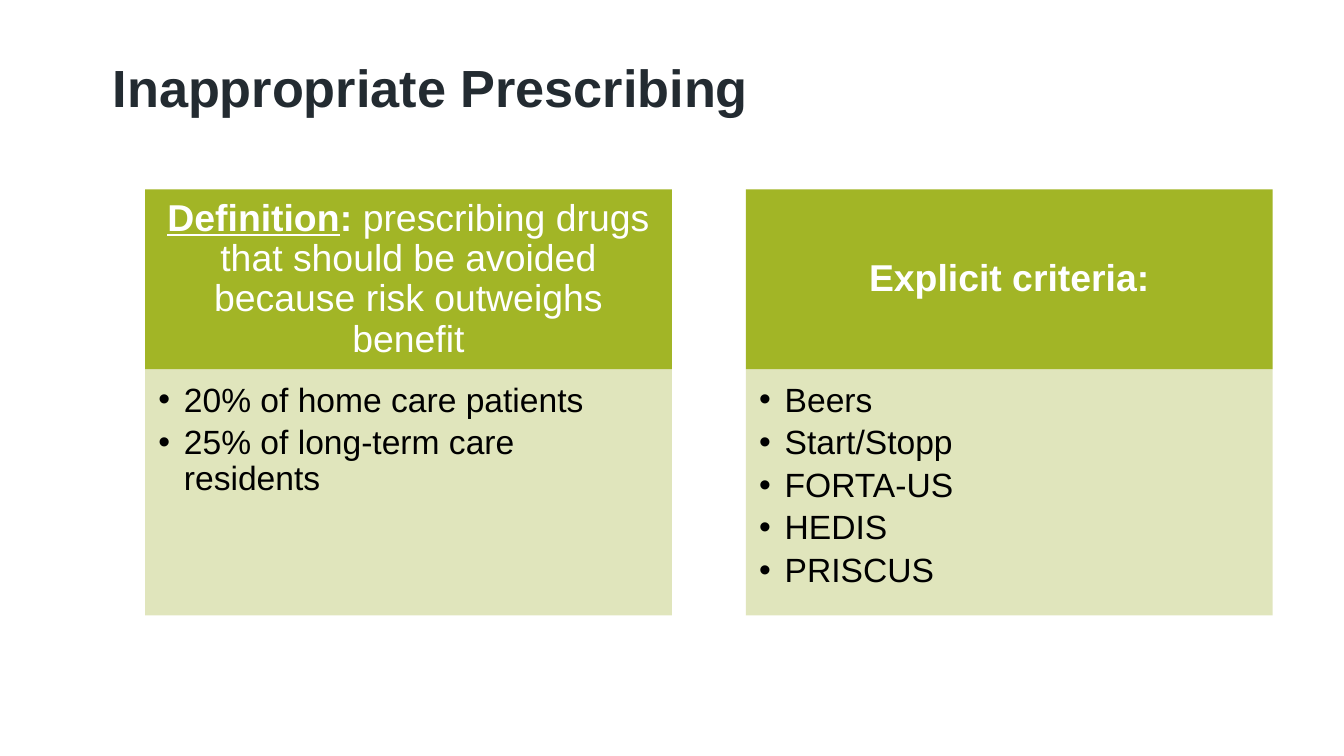
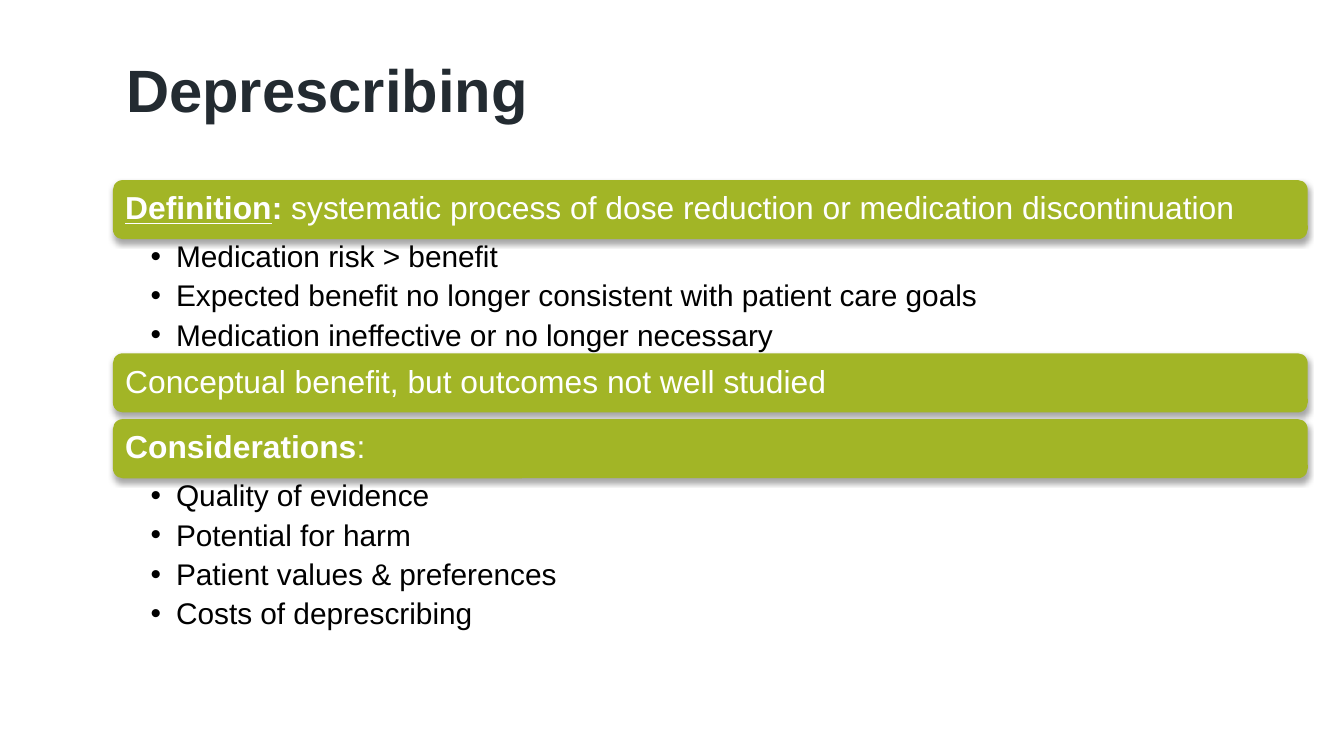
from dataclasses import dataclass
from typing import NamedTuple

from lxml.etree import SubElement
from pptx import Presentation
from pptx.dml.color import RGBColor
from pptx.enum.shapes import MSO_SHAPE as Preset
from pptx.enum.text import MSO_ANCHOR as Anchor, PP_ALIGN as Align
from pptx.oxml.ns import qn
from pptx.util import Inches, Pt

# Shared look; the grid has 100 columns, and rows are as tall as columns are wide
FONT = "Arial"
INK, GREEN, PALE, WHITE, BLACK = "232B31", "A2B526", "C3CD7B", "FFFFFF", "000000"
COLUMNS, ROWS = 100, 56.25
CELL = Inches(10) / COLUMNS
LINE_SPACING = 0.9


class Area(NamedTuple):
    left: float
    top: float
    width: float
    height: float


class Insets(NamedTuple):
    left: float
    top: float
    right: float
    bottom: float


class Span(NamedTuple):
    text: str
    bold: bool = False
    underline: bool = False


@dataclass(frozen=True)
class TextStyle:
    size: float
    color: str
    insets: Insets
    anchor: Anchor = Anchor.MIDDLE
    align: Align = Align.LEFT
    space_after: float = 0
    bulleted: bool = False


@dataclass(frozen=True)
class Section:
    heading: list[Span]
    items: list[str]


TITLE_INSETS = Insets(1, 0, 1, 0)
CARD_HEAD = TextStyle(20, WHITE, Insets(1.6, 0.9, 1.6, 0.9), align=Align.CENTER)
CARD_BODY = TextStyle(18, BLACK, Insets(1, 1, 1.4, 1.6), Anchor.TOP,
                      space_after=3.4, bulleted=True)
BAR = TextStyle(17, WHITE, Insets(0.7, 0.7, 0.7, 0.7))
BAR_LIST = TextStyle(16, BLACK, Insets(2.8, 0.2, 1.2, 0.2), Anchor.TOP,
                     space_after=3.8, bulleted=True)

CARDS = [
    Section([Span("Definition", True, True), Span(": ", True),
             Span("prescribing drugs that should be avoided because risk outweighs benefit")],
            ["20% of home care patients", "25% of long-term care residents"]),
    Section([Span("Explicit criteria:", True)],
            ["Beers", "Start/Stopp", "FORTA-US", "HEDIS", "PRISCUS"]),
]

BARS = [
    Section([Span("Definition", True, True), Span(": ", True),
             Span("systematic process of dose reduction or medication discontinuation")],
            ["Medication risk > benefit",
             "Expected benefit no longer consistent with patient care goals",
             "Medication ineffective or no longer necessary"]),
    Section([Span("Conceptual benefit, but outcomes not well studied")], []),
    Section([Span("Considerations", True), Span(":")],
            ["Quality of evidence", "Potential for harm",
             "Patient values & preferences", "Costs of deprescribing"]),
]


def rgb(color: str) -> RGBColor:
    return RGBColor.from_string(color)


def grid(cells: float) -> int:
    return round(cells * CELL)


def add_bullet(para) -> None:
    props = para._p.get_or_add_pPr()
    props.set("marL", str(grid(1.9)))
    props.set("indent", str(grid(-1.9)))
    SubElement(props, qn("a:buFont"), typeface=FONT)
    SubElement(props, qn("a:buChar"), char="•")


def write(box, lines: list[list[Span]], style: TextStyle) -> None:
    frame = box.text_frame
    frame.word_wrap = True
    frame.vertical_anchor = style.anchor
    frame.margin_left, frame.margin_top, frame.margin_right, frame.margin_bottom = (
        grid(inset) for inset in style.insets)
    for index, line in enumerate(lines):
        para = frame.add_paragraph() if index else frame.paragraphs[0]
        para.alignment = style.align
        para.line_spacing = LINE_SPACING
        para.space_after = Pt(style.space_after)
        if style.bulleted:
            add_bullet(para)
        para.font.name = FONT
        para.font.size = Pt(style.size)
        para.font.color.rgb = rgb(style.color)
        for span in line:
            run = para.add_run()
            run.text = span.text
            run.font.bold = span.bold
            run.font.underline = span.underline


def add_panel(page, area: Area, color: str, preset: Preset = Preset.RECTANGLE):
    panel = page.shapes.add_shape(preset, *map(grid, area))
    panel.fill.solid()
    panel.fill.fore_color.rgb = rgb(color)
    panel.line.fill.background()
    panel.shadow.inherit = False
    return panel


def add_text(page, area: Area, lines: list[list[Span]], style: TextStyle) -> None:
    write(page.shapes.add_textbox(*map(grid, area)), lines, style)


def make_translucent(panel, percent: int) -> None:
    color = panel._element.spPr.find(qn("a:solidFill"))[0]
    SubElement(color, qn("a:alpha"), val=str(percent * 1000))


def drop_shadow(panel) -> None:
    effects = panel._element.spPr.find(qn("a:effectLst"))
    shadow = SubElement(effects, qn("a:outerShdw"), blurRad=str(Pt(3.1)),
                        dist=str(Pt(1.8)), dir="5400000", rotWithShape="0")
    color = SubElement(shadow, qn("a:srgbClr"), val=BLACK)
    SubElement(color, qn("a:alpha"), val="35000")


def as_lines(items: list[str]) -> list[list[Span]]:
    return [[Span(item)] for item in items]


def add_page(deck, title: str, left: float, top: float, size: float):
    page = deck.slides.add_slide(deck.slide_layouts[6])
    page.background.fill.solid()
    page.background.fill.fore_color.rgb = rgb(WHITE)
    add_text(page, Area(left, top, 88.9, 10.1), [[Span(title, True)]],
             TextStyle(size, INK, TITLE_INSETS))
    return page


def draw_cards(page) -> None:
    left, top, width, pitch = 10.8, 14.1, 39.2, 44.7
    head_height, body_height = 13.4, 18.3
    for index, card in enumerate(CARDS):
        x = left + index * pitch
        head = add_panel(page, Area(x, top, width, head_height), GREEN)
        write(head, [card.heading], CARD_HEAD)
        body = add_panel(page, Area(x, top + head_height, width, body_height), PALE)
        make_translucent(body, 50)
        write(body, as_lines(card.items), CARD_BODY)


def draw_bars(page) -> None:
    left, top, width = 8.4, 13.4, 88.9
    bar_height, item_height, gap = 4.4, 2.83, 0.5
    for section in BARS:
        bar = add_panel(page, Area(left, top, width, bar_height), GREEN,
                        Preset.ROUNDED_RECTANGLE)
        drop_shadow(bar)
        write(bar, [section.heading], BAR)
        top += bar_height
        if section.items:
            list_height = item_height * len(section.items)
            add_text(page, Area(left, top, width, list_height),
                     as_lines(section.items), BAR_LIST)
            top += list_height
        else:
            top += gap


def main() -> None:
    deck = Presentation()
    deck.slide_width, deck.slide_height = grid(COLUMNS), grid(ROWS)
    draw_cards(add_page(deck, "Inappropriate Prescribing", 7.4, 1.7, 28))
    draw_bars(add_page(deck, "Deprescribing", 8.4, 1.9, 32))
    deck.save("out.pptx")


if __name__ == "__main__":
    main()
